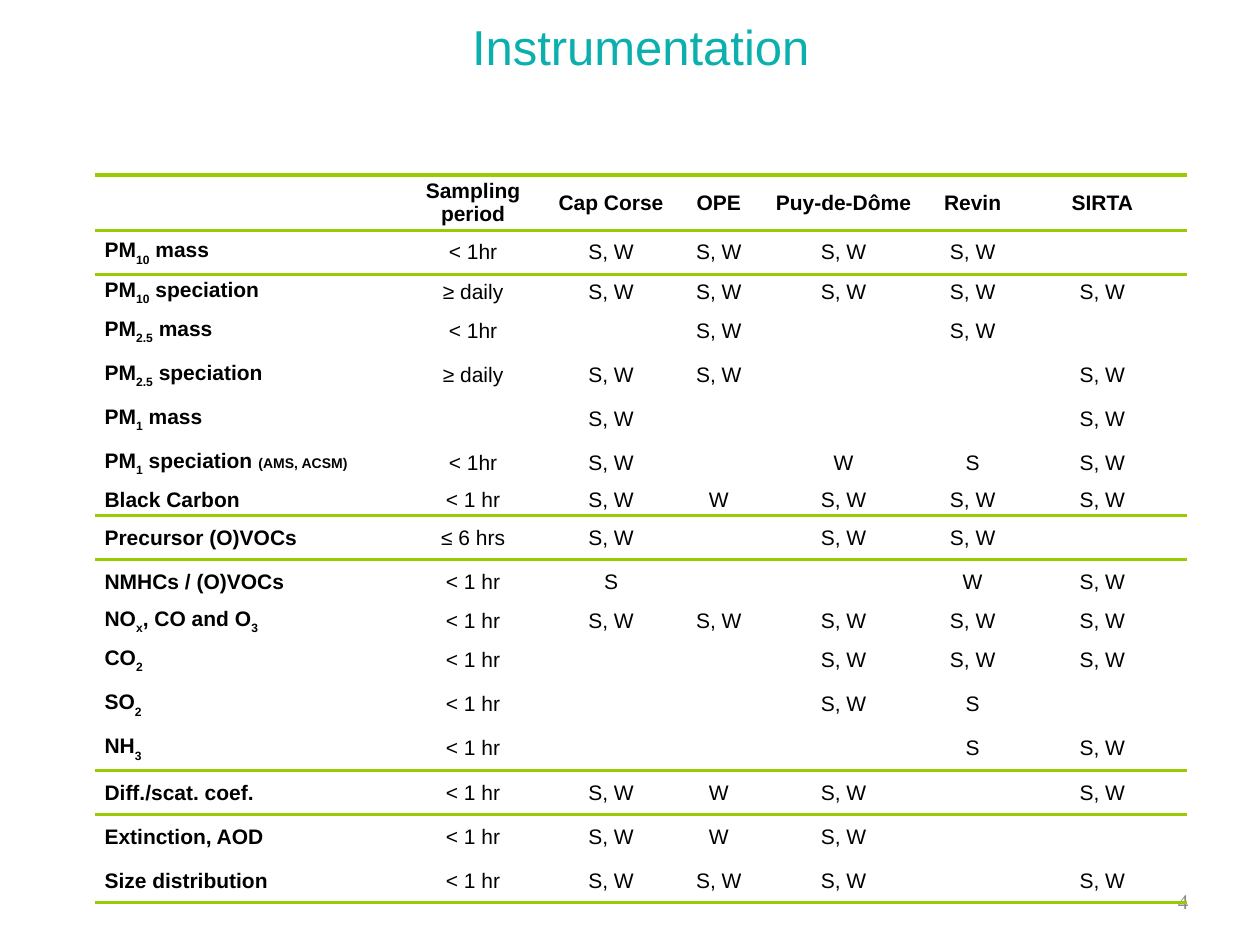
from lxml import etree
from pptx import Presentation
from pptx import util as u
from pptx.dml.color import RGBColor
from pptx.enum import text
from pptx.oxml import ns

TEAL = RGBColor(0x0B, 0xB0, 0xAE)
GREEN = RGBColor(0x99, 0xCC, 0x00)
BLACK = RGBColor(0, 0, 0)
GREY = RGBColor(0x8C, 0x8C, 0x8C)

PLAIN_TABLE = "{2D5ABB26-0587-4C30-8999-92F81FD0307C}"
LEFT, CENTER, RIGHT = text.PP_ALIGN.LEFT, text.PP_ALIGN.CENTER, text.PP_ALIGN.RIGHT

# Table content: _x_ marks a subscript, the part after | is small
SW = "S, W"
ROWS = [
    ["", "Sampling period", "Cap Corse", "OPE", "Puy-de-Dôme", "Revin", "SIRTA"],
    ["PM_10_ mass", "< 1hr", SW, SW, SW, SW, ""],
    ["PM_10_ speciation", "≥ daily", SW, SW, SW, SW, SW],
    ["PM_2.5_ mass", "< 1hr", "", SW, "", SW, ""],
    ["PM_2.5_ speciation", "≥ daily", SW, SW, "", "", SW],
    ["PM_1_ mass", "", SW, "", "", "", SW],
    ["PM_1_ speciation |(AMS, ACSM)", "< 1hr", SW, "", "W", "S", SW],
    ["Black Carbon", "< 1 hr", SW, "W", SW, SW, SW],
    ["Precursor (O)VOCs", "≤ 6 hrs", SW, "", SW, SW, ""],
    ["NMHCs / (O)VOCs", "< 1 hr", "S", "", "", "W", SW],
    ["NO_x_, CO and O_3_", "< 1 hr", SW, SW, SW, SW, SW],
    ["CO_2_", "< 1 hr", "", "", SW, SW, SW],
    ["SO_2_", "< 1 hr", "", "", SW, "S", ""],
    ["NH_3_", "< 1 hr", "", "", "", "S", SW],
    ["Diff./scat. coef.", "< 1 hr", SW, "W", SW, "", SW],
    ["Extinction, AOD", "< 1 hr", SW, "W", SW, "", ""],
    ["Size distribution", "< 1 hr", SW, SW, SW, "", SW],
]
COLUMN_SHARES = [0.244, 0.113, 0.106, 0.065, 0.133, 0.072, 0.134]
ROW_HEIGHT = 0.35 / 7.5
SPECIAL_HEIGHTS = {0: 0.42 / 7.5, 2: 0.26 / 7.5, 7: 0.22 / 7.5, 10: 0.26 / 7.5}
GROUP_ENDS = [0, 7, 13, 16]


def write(paragraph, content, size=12, color=BLACK, bold=False, font="Arial", align=LEFT):
    """Fill a paragraph, reading the subscript and small-text marks."""
    paragraph.alignment = align
    paragraph.font.size = u.Pt(size)
    main, _, small = content.partition("|")
    pieces = [(piece, size, index % 2) for index, piece in enumerate(main.split("_"))]
    pieces.append((small, 8, False))
    for piece, points, subscript in pieces:
        if not piece:
            continue
        run = paragraph.add_run()
        run.text = piece
        run.font.name = font
        run.font.size = u.Pt(points)
        run.font.bold = bold
        run.font.color.rgb = color
        if subscript:
            run.font._element.set("baseline", "-30000")


class SlideBuilder:
    def __init__(self, presentation):
        self.width = presentation.slide_width
        self.height = presentation.slide_height
        self.slide = presentation.slides.add_slide(presentation.slide_layouts[5])

    def box(self, left, top, width, height):
        """Turn shares of the slide into lengths."""
        return (int(left * self.width), int(top * self.height),
                int(width * self.width), int(height * self.height))

    def title(self, content, *shares):
        shape = self.slide.shapes.title
        shape.left, shape.top, shape.width, shape.height = self.box(*shares)
        shape.text_frame.vertical_anchor = text.MSO_ANCHOR.MIDDLE
        write(shape.text_frame.paragraphs[0], content, size=28, color=TEAL, align=CENTER)

    def page_number(self, content, *shares):
        frame = self.slide.shapes.add_textbox(*self.box(*shares)).text_frame
        frame.word_wrap = True
        frame.vertical_anchor = text.MSO_ANCHOR.MIDDLE
        write(frame.paragraphs[0], content, color=GREY, font="Times New Roman", align=RIGHT)

    def border(self, cell, side):
        properties = cell._tc.get_or_add_tcPr()
        line = etree.SubElement(properties, ns.qn("a:" + side), w=str(u.Pt(2.25)))
        fill = etree.SubElement(line, ns.qn("a:solidFill"))
        etree.SubElement(fill, ns.qn("a:srgbClr"), val=str(GREEN))

    def table(self, rows, left, top):
        heights = [SPECIAL_HEIGHTS.get(index, ROW_HEIGHT) for index in range(len(rows))]
        area = self.box(left, top, sum(COLUMN_SHARES), sum(heights))
        table = self.slide.shapes.add_table(len(rows), len(COLUMN_SHARES), *area).table
        table.first_row = table.horz_banding = False
        table._tbl.tblPr.find(ns.qn("a:tableStyleId")).text = PLAIN_TABLE
        for column, share in zip(table.columns, COLUMN_SHARES):
            column.width = int(share * self.width)
        for row, share in zip(table.rows, heights):
            row.height = int(share * self.height)
        for row_index, values in enumerate(rows):
            for column_index, value in enumerate(values):
                self.cell(table.cell(row_index, column_index), value, row_index, column_index)

    def cell(self, cell, value, row_index, column_index):
        cell.margin_left = cell.margin_right = u.Inches(0.08)
        cell.margin_top = cell.margin_bottom = u.Inches(0.02)
        cell.vertical_anchor = text.MSO_ANCHOR.MIDDLE
        write(cell.text_frame.paragraphs[0], value,
              bold=row_index == 0 or column_index == 0,
              align=CENTER if column_index else LEFT)
        # Group rules: borders come before the fill in the cell properties
        if row_index == 0 or row_index - 1 in GROUP_ENDS:
            self.border(cell, "lnT")
        if row_index in GROUP_ENDS:
            self.border(cell, "lnB")
        cell.fill.background()


def main():
    presentation = Presentation()
    presentation.slide_width, presentation.slide_height = u.Inches(10), u.Inches(7.5)
    builder = SlideBuilder(presentation)
    builder.page_number("4", 0.72, 6.95 / 7.5, 0.233, 0.4 / 7.5)
    builder.title("Instrumentation", 0.067, 0.05 / 7.5, 0.883, 0.63 / 7.5)
    builder.table(ROWS, 0.075, 1.39 / 7.5)
    presentation.save("out.pptx")


if __name__ == "__main__":
    main()
